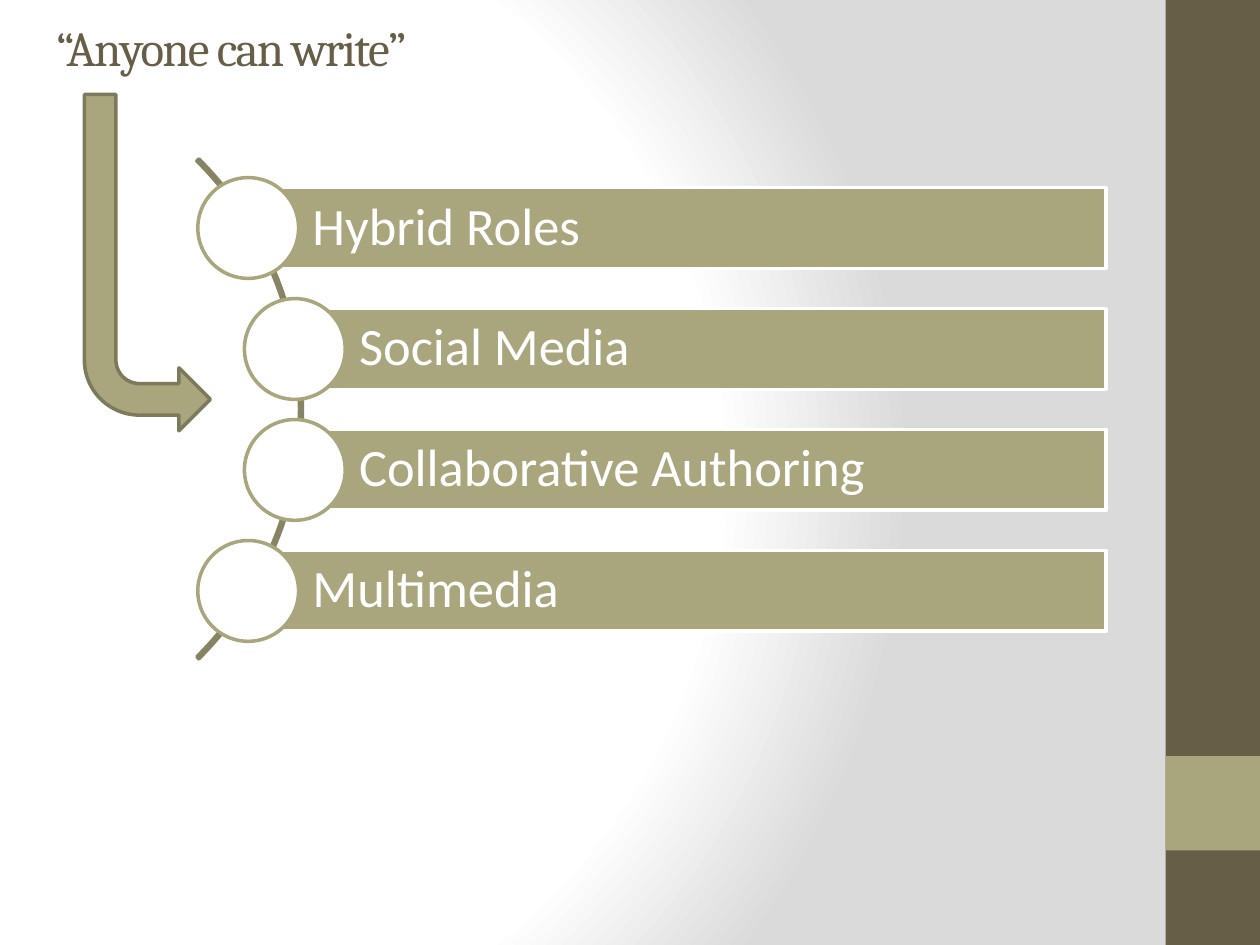
import pptx
import pptx.util
import pptx.dml.color
import pptx.enum.shapes
import pptx.enum.text
import lxml.etree

Inches, Pt = pptx.util.Inches, pptx.util.Pt
SHAPE = pptx.enum.shapes.MSO_SHAPE
ALIGN = pptx.enum.text.PP_ALIGN
MIDDLE = pptx.enum.text.MSO_ANCHOR.MIDDLE
COLORS = {"white": "FFFFFF", "grey": "DADADA", "brown": "675E47",
          "olive": "A9A57C", "arc": "878463", "arrow_edge": "7D7A5C"}


def rgb(name):
    return pptx.dml.color.RGBColor.from_string(COLORS[name])


def add_figure(kind, left, top, width, height, fill=None, line=None):
    """Add a flat preset shape; lengths in inches, no colour name means none."""
    figure = slide.shapes.add_shape(kind, *map(Inches, (left, top, width, height)))
    figure.shadow.inherit = False
    for part, color in ((figure.fill, fill), (figure.line.fill, line)):
        if color:
            part.solid()
            part.fore_color.rgb = rgb(color)
        else:
            part.background()
    if line:
        figure.line.width = Pt(2)
    return figure


WIDTH, HEIGHT = 10, 7.5
deck = pptx.Presentation()
deck.slide_width, deck.slide_height = Inches(WIDTH), Inches(HEIGHT)
slide = deck.slides.add_slide(deck.slide_layouts[5])

# Background: circular gradient centred left of the middle
slide.background.fill.gradient()
gradient = slide.element.xpath(".//p:bg//a:gradFill")[0]
for child in list(gradient):
    gradient.remove(child)
A = "{http://schemas.openxmlformats.org/drawingml/2006/main}"
stops = lxml.etree.SubElement(gradient, A + "gsLst")
for percent, color in ((0, "white"), (75, "white"), (100, "grey")):
    stop = lxml.etree.SubElement(stops, A + "gs", pos=str(percent * 1000))
    lxml.etree.SubElement(stop, A + "srgbClr", val=COLORS[color])
circle = lxml.etree.SubElement(gradient, A + "path", {"path": "circle"})
lxml.etree.SubElement(circle, A + "fillToRect", l="20000", t="50000", r="100000", b="50000")

# Side band with its accent square
BAND = 0.075 * WIDTH
add_figure(SHAPE.RECTANGLE, WIDTH - BAND, 0, BAND, HEIGHT, "brown")
add_figure(SHAPE.RECTANGLE, WIDTH - BAND, 0.8 * HEIGHT, BAND, BAND, "olive")

# Curved list of topics
arc = add_figure(SHAPE.BLOCK_ARC, -3.21, 0.44, 5.61, 5.61, line="arc")
for index, value in enumerate((189, 27, 0.004)):
    arc.adjustments[index] = value

DOT, BAR, PITCH, FIRST_MIDDLE, BAR_RIGHT = 0.8, 0.64, 0.96, 1.81, 8.78
topics = (("Hybrid Roles", 1.97), ("Social Media", 2.34),
          ("Collaborative Authoring", 2.34), ("Multimedia", 1.97))
bar_format = {"margin_left": Inches(0.51), "margin_right": Inches(0.08),
              "margin_top": Inches(0.08), "margin_bottom": Inches(0.08),
              "vertical_anchor": MIDDLE, "word_wrap": True}
for row, (topic, left) in enumerate(topics):
    middle = FIRST_MIDDLE + row * PITCH
    bar = add_figure(SHAPE.RECTANGLE, left, middle - BAR / 2, BAR_RIGHT - left, BAR,
                     "olive", "white")
    for name, value in bar_format.items():
        setattr(bar.text_frame, name, value)
    label = bar.text_frame.paragraphs[0]
    label.text, label.alignment, label.line_spacing = topic, ALIGN.LEFT, 0.9
    label.font.name, label.font.size = "Calibri", Pt(30)
    label.font.color.rgb = rgb("white")
    add_figure(SHAPE.OVAL, left - DOT / 2, middle - DOT / 2, DOT, DOT, "white", "olive")

# Arrow from the title down to the list
arrow = add_figure(SHAPE.BENT_ARROW, 0.67, 0.75, 1, 2.67, "olive", "arrow_edge")
arrow.element.spPr.xfrm.set("flipV", "1")

title = slide.shapes.title
title_place = {"left": -0.25, "top": -0.25, "width": 4.17, "height": 1.25}
for name, value in title_place.items():
    setattr(title, name, Inches(value))
title.text_frame.vertical_anchor = MIDDLE
heading = title.text_frame.paragraphs[0]
heading.alignment = ALIGN.CENTER
quote = heading.add_run()
quote.text = "“Anyone can write”"
quote.font.name, quote.font.size = "Cambria", Pt(28)
quote.font.color.rgb = rgb("brown")
quote.font._element.set("spc", "-100")

deck.save("out.pptx")
